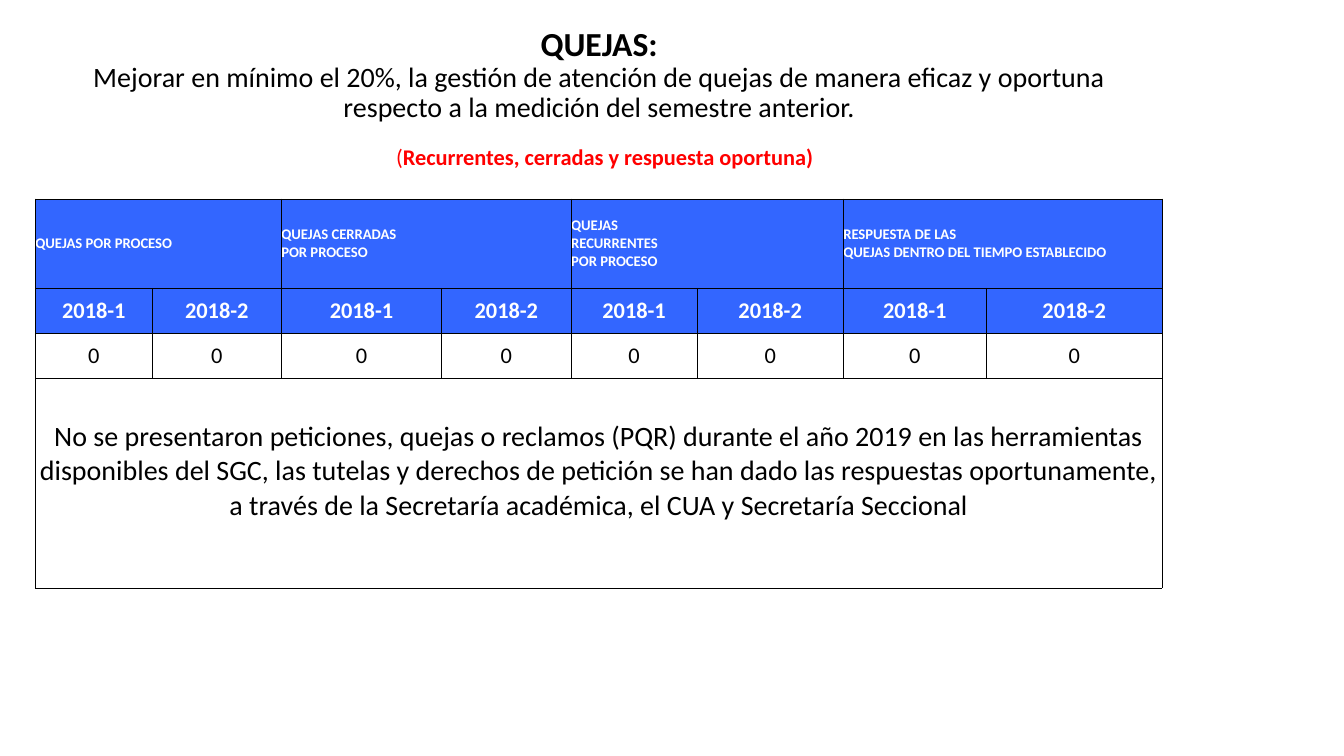
"""Build the slide on complaints (quejas) per semester."""
from lxml import etree
from pptx import Presentation
from pptx import util as u
from pptx.dml.color import RGBColor
from pptx.enum import text
from pptx.oxml import ns

BLACK = RGBColor(0x00, 0x00, 0x00)
WHITE = RGBColor(0xFF, 0xFF, 0xFF)
RED = RGBColor(0xFF, 0x00, 0x00)
BLUE = RGBColor(0x33, 0x66, 0xFF)


def style(paragraph, size, color, bold, align=text.PP_ALIGN.CENTER):
    paragraph.alignment = align
    for run in paragraph.runs:
        run.font.name = "Calibri"
        run.font.size = u.Pt(size)
        run.font.bold = bold
        run.font.color.rgb = color


def add_borders(cell):
    properties = cell._tc.get_or_add_tcPr()
    for side in ("a:lnL", "a:lnR", "a:lnT", "a:lnB"):
        line = etree.SubElement(properties, ns.qn(side), w=str(u.Pt(0.5)))
        fill = etree.SubElement(line, ns.qn("a:solidFill"))
        etree.SubElement(fill, ns.qn("a:srgbClr"), val=str(BLACK))


prs = Presentation()
prs.slide_width, prs.slide_height = u.Pt(960), u.Pt(540)
slide = prs.slides.add_slide(prs.slide_layouts[6])

heading = slide.shapes.add_textbox(u.Pt(36.7), u.Pt(19.4), u.Pt(782.6), u.Pt(104)).text_frame
heading.word_wrap = True
heading.margin_top = heading.margin_bottom = 0
heading.text = (
    "QUEJAS:\n"
    "Mejorar en mínimo el 20%, la gestión de atención de quejas de manera eficaz y oportuna "
    "respecto a la medición del semestre anterior.\n"
    "(Recurrentes, cerradas y respuesta oportuna)"
)
title, goal, scope = heading.paragraphs
style(title, 24, BLACK, True)
style(goal, 20, BLACK, False)
scope.text = "("
scope.add_run().text = "Recurrentes, cerradas y respuesta oportuna)"
style(scope, 16, RED, True)
scope.runs[0].font.bold = False
scope.space_before = u.Pt(16)
scope._p.get_or_add_pPr().set("marL", str(u.Pt(8)))
for paragraph in heading.paragraphs:
    paragraph.line_spacing = 0.9

groups = [
    "QUEJAS POR PROCESO",
    "QUEJAS CERRADAS\nPOR PROCESO",
    "QUEJAS\nRECURRENTES\nPOR PROCESO",
    "RESPUESTA DE LAS\nQUEJAS DENTRO DEL TIEMPO ESTABLECIDO",
]
semesters = ["2018-1", "2018-2"] * len(groups)
counts = ["0"] * len(semesters)
conclusion = (
    "No se presentaron peticiones, quejas o reclamos (PQR) durante el año 2019 en las herramientas "
    "disponibles del SGC, las tutelas y derechos de petición se han dado las respuestas oportunamente, "
    "a través de la Secretaría académica, el CUA y Secretaría Seccional"
)
column_widths = [83.5, 92.2, 114.5, 92.5, 90, 104.4, 102.2, 125.5]
row_heights = [63.6, 32.2, 32.2, 149.9]

complaints = slide.shapes.add_table(
    len(row_heights), len(column_widths), u.Pt(25.3), u.Pt(142.2),
    u.Pt(sum(column_widths)), u.Pt(sum(row_heights)),
).table
complaints.first_row = complaints.horz_banding = False
for column, width in zip(complaints.columns, column_widths):
    column.width = u.Pt(width)
for row, height in zip(complaints.rows, row_heights):
    row.height = u.Pt(height)

for index, group in enumerate(groups):
    complaints.cell(0, 2 * index).merge(complaints.cell(0, 2 * index + 1))
    complaints.cell(0, 2 * index).text_frame.text = group
for index, (semester, count) in enumerate(zip(semesters, counts)):
    complaints.cell(1, index).text_frame.text = semester
    complaints.cell(2, index).text_frame.text = count
complaints.cell(3, 0).merge(complaints.cell(3, len(semesters) - 1))
complaints.cell(3, 0).text_frame.text = conclusion

row_styles = [
    (10.5, WHITE, True, text.PP_ALIGN.JUSTIFY),
    (16, WHITE, True),
    (16, BLACK, False),
    (20, BLACK, False),
]
for row_index, (row, row_style) in enumerate(zip(complaints.rows, row_styles)):
    for cell in row.cells:
        cell.margin_left = cell.margin_right = cell.margin_top = cell.margin_bottom = 0
        cell.vertical_anchor = text.MSO_ANCHOR.MIDDLE
        add_borders(cell)
        if row_index < 2:
            cell.fill.solid()
            cell.fill.fore_color.rgb = BLUE
        else:
            cell.fill.background()
        for paragraph in cell.text_frame.paragraphs:
            style(paragraph, *row_style)
complaints.cell(3, 0).margin_bottom = u.Pt(17)

prs.save("out.pptx")
